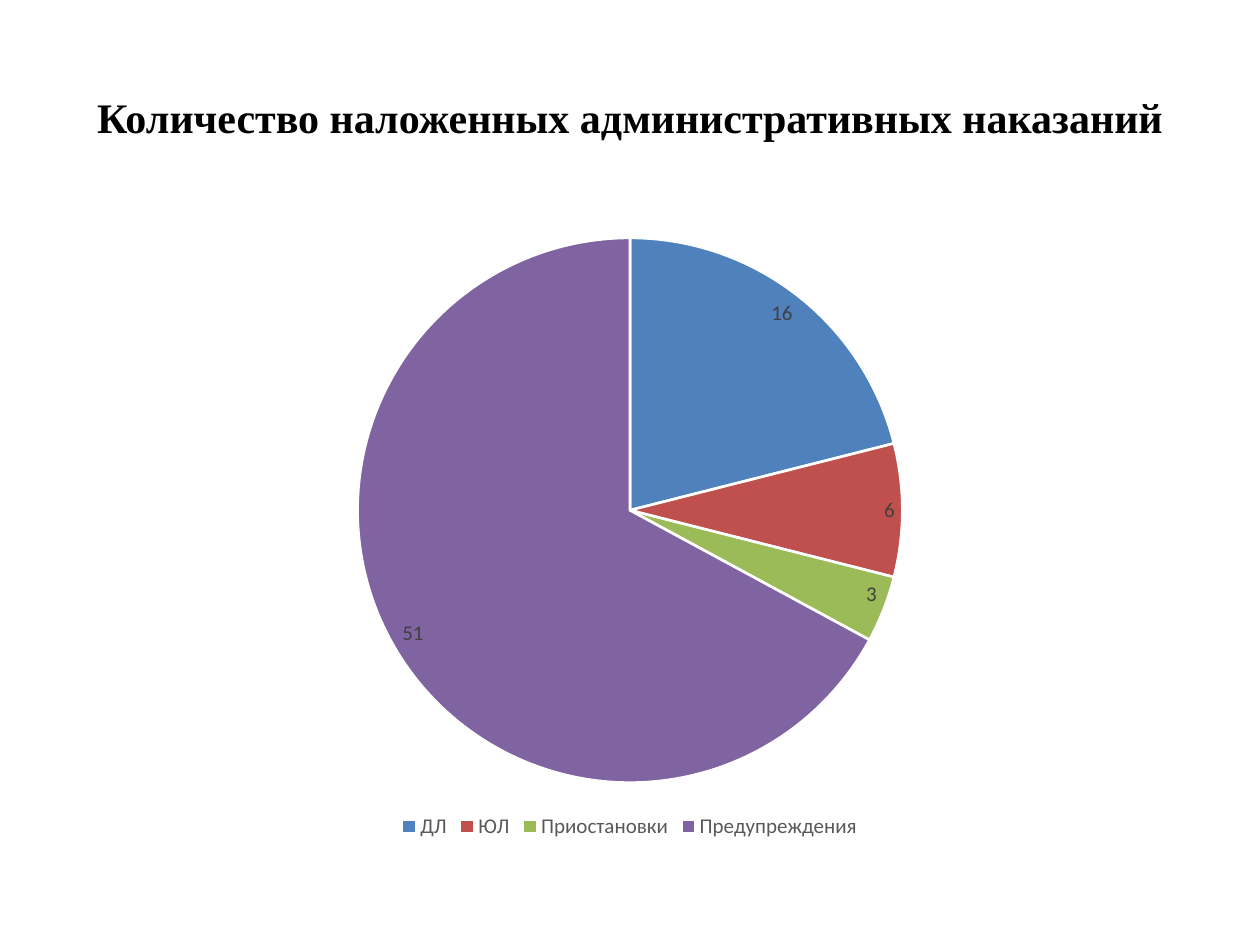
from dataclasses import dataclass

from pptx import Presentation
from pptx.chart.data import CategoryChartData
from pptx.dml.color import RGBColor
from pptx.enum.chart import XL_CHART_TYPE, XL_LABEL_POSITION, XL_LEGEND_POSITION
from pptx.enum.text import MSO_ANCHOR, PP_ALIGN
from pptx.util import Inches, Pt


@dataclass(frozen=True)
class Theme:
    title_font: str = "Times New Roman"
    chart_font: str = "Calibri"
    title_size: int = 24
    chart_size: int = 12
    title: str = "000000"
    legend: str = "595959"
    label: str = "404040"
    border: str = "FFFFFF"


THEME = Theme()
PENALTIES = [
    ("ДЛ", 16, "4F81BD"),
    ("ЮЛ", 6, "C0504D"),
    ("Приостановки", 3, "9BBB59"),
    ("Предупреждения", 51, "8064A2"),
]


def style_font(font, name, size, color, bold=False):
    font.name = name
    font.size = Pt(size)
    font.bold = bold
    font.color.rgb = RGBColor.from_string(color)


prs = Presentation()
prs.slide_width, prs.slide_height = Inches(10), Inches(7.5)
slide = prs.slides.add_slide(prs.slide_layouts[5])

# Title
heading = slide.shapes.title
heading.left, heading.top = Inches(0.5), Inches(0.3)
heading.width, heading.height = Inches(9), Inches(1.25)
heading.text_frame.text = "Количество наложенных административных наказаний"
heading.text_frame.vertical_anchor = MSO_ANCHOR.MIDDLE
heading_line = heading.text_frame.paragraphs[0]
heading_line.alignment = PP_ALIGN.CENTER
style_font(heading_line.runs[0].font, THEME.title_font, THEME.title_size, THEME.title, bold=True)

# Pie of penalties
penalty_data = CategoryChartData()
penalty_data.categories = [name for name, _, _ in PENALTIES]
penalty_data.add_series("Series 1", [count for _, count, _ in PENALTIES])
pie = slide.shapes.add_chart(
    XL_CHART_TYPE.PIE, Inches(0.5), Inches(1.75), Inches(9), Inches(4.95), penalty_data
).chart
pie.has_title = False

pie.has_legend = True
pie.legend.position = XL_LEGEND_POSITION.BOTTOM
pie.legend.include_in_layout = False
style_font(pie.legend.font, THEME.chart_font, THEME.chart_size, THEME.legend)

penalties = pie.plots[0].series[0]
for index, (_, _, color) in enumerate(PENALTIES):
    slice_format = penalties.points[index].format
    slice_format.fill.solid()
    slice_format.fill.fore_color.rgb = RGBColor.from_string(color)
    slice_format.line.color.rgb = RGBColor.from_string(THEME.border)
    slice_format.line.width = Pt(1.5)

counts = penalties.data_labels
counts.show_value = True
counts.position = XL_LABEL_POSITION.INSIDE_END
style_font(counts.font, THEME.chart_font, THEME.chart_size, THEME.label)

prs.save("out.pptx")
